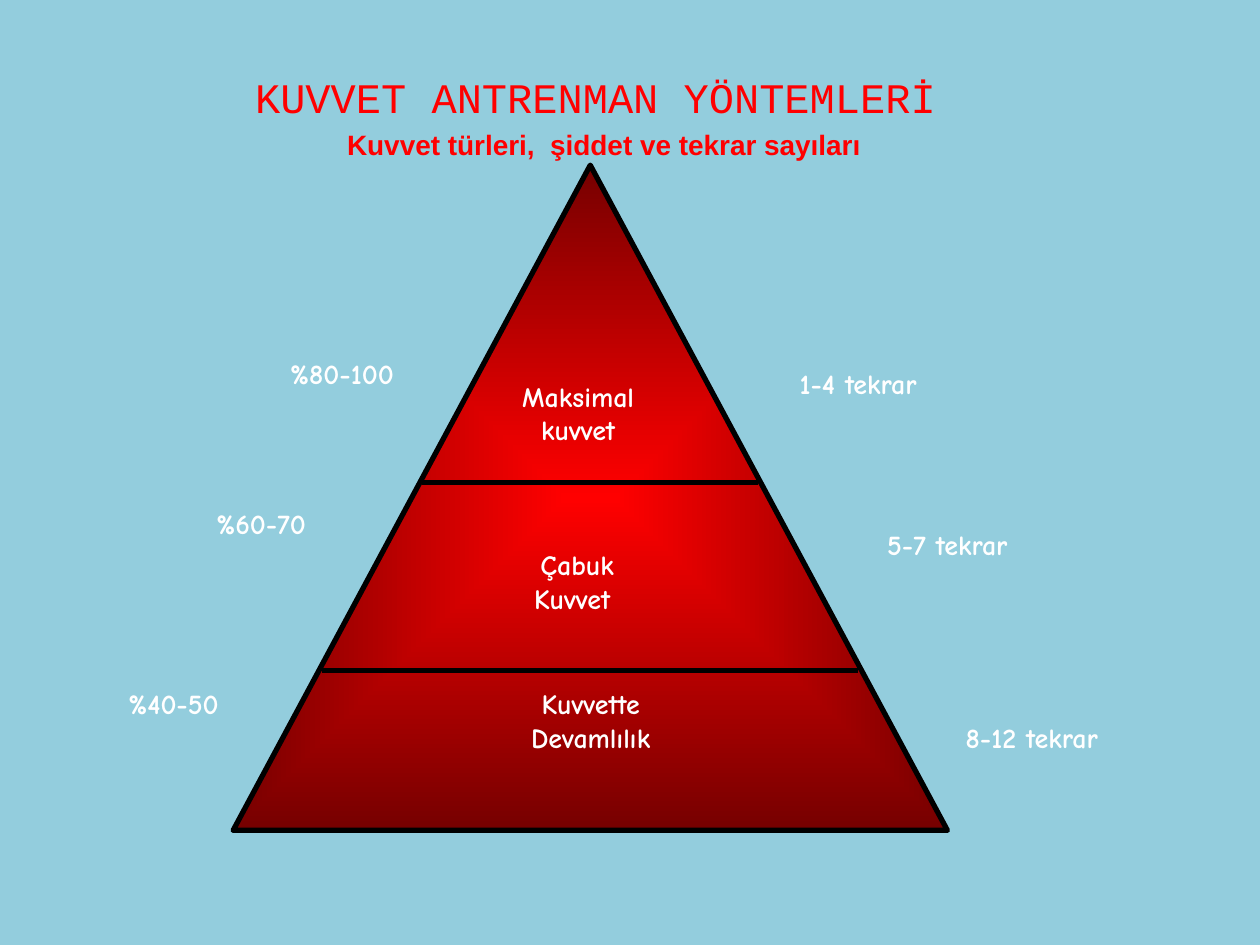
import lxml.etree
import pptx
import pptx.dml.color
import pptx.enum.dml
import pptx.enum.shapes
import pptx.enum.text
import pptx.oxml
import pptx.oxml.ns
import pptx.util
from pptx.util import Cm

SKY = pptx.dml.color.RGBColor(0x93, 0xCD, 0xDD)
RED = pptx.dml.color.RGBColor(0xFF, 0x00, 0x00)
DARK_RED = pptx.dml.color.RGBColor(0x76, 0x00, 0x00)
BLACK = pptx.dml.color.RGBColor(0x00, 0x00, 0x00)
WHITE = pptx.dml.color.RGBColor(0xFF, 0xFF, 0xFF)
CENTER = pptx.enum.text.PP_ALIGN.CENTER


def format_paragraph(paragraph, font_name, size, color, bold):
    paragraph.alignment = CENTER
    paragraph.font.name = font_name
    paragraph.font.size = pptx.util.Pt(size)
    paragraph.font.color.rgb = color
    paragraph.font.bold = bold


presentation = pptx.Presentation()
presentation.slide_width = Cm(25.4)
presentation.slide_height = Cm(19.05)
slide = presentation.slides.add_slide(presentation.slide_layouts[5])
slide.background.fill.solid()
slide.background.fill.fore_color.rgb = SKY

# Title and subtitle
title = slide.shapes.title
title.left, title.top, title.width, title.height = Cm(3.1), Cm(1.32), Cm(18.31), Cm(2.11)
title_frame = title.text_frame
title_frame.text = "KUVVET ANTRENMAN YÖNTEMLERİ \nKuvvet türleri,  şiddet ve tekrar sayıları "
title_frame.vertical_anchor = pptx.enum.text.MSO_ANCHOR.TOP
title_frame.auto_size = pptx.enum.text.MSO_AUTO_SIZE.NONE
title_styles = [("Courier New", 24, False), ("Arial", 16, True)]
for paragraph, (font_name, size, bold) in zip(title_frame.paragraphs, title_styles):
    format_paragraph(paragraph, font_name, size, RED, bold)
    paragraph.space_before = pptx.util.Pt(size * 0.2)

# Pyramid, bright in the middle
pyramid = slide.shapes.add_shape(
    pptx.enum.shapes.MSO_SHAPE.ISOSCELES_TRIANGLE, Cm(4.7), Cm(3.33), Cm(14.4), Cm(13.41))
pyramid.shadow.inherit = False
pyramid.line.color.rgb = BLACK
pyramid.line.width = pptx.util.Pt(3)
pyramid.fill.gradient()
for stop, position, color in zip(pyramid.fill.gradient_stops, (0, 1), (RED, DARK_RED)):
    stop.position = position
    stop.color.rgb = color
gradient = pyramid.fill._xPr.find(pptx.oxml.ns.qn("a:gradFill"))
gradient.remove(gradient.find(pptx.oxml.ns.qn("a:lin")))
gradient_path = pptx.oxml.parse_xml(
    f'<a:path {pptx.oxml.ns.nsdecls("a")} path="shape">'
    '<a:fillToRect l="50000" t="50000" r="50000" b="50000"/></a:path>')
gradient.find(pptx.oxml.ns.qn("a:gsLst")).addnext(gradient_path)

# Dividers between the levels
for left, right, y in [(6.5, 17.3, 13.51), (8.51, 15.29, 9.73)]:
    divider = slide.shapes.add_connector(
        pptx.enum.shapes.MSO_CONNECTOR.STRAIGHT, Cm(left), Cm(y), Cm(right), Cm(y))
    divider.line.color.rgb = BLACK
    divider.line.width = pptx.util.Pt(3)
    lxml.etree.SubElement(divider._element.spPr, pptx.oxml.ns.qn("a:effectLst"))

# Strength type, intensity and repetitions of each level: text, left, top, width
labels = [
    ("Maksimal kuvvet", 9.6, 7.52, 4.11),
    ("Çabuk Kuvvet ", 9.88, 10.92, 3.51),
    ("Kuvvette Devamlılık", 9.6, 13.72, 4.62),
    ("%80-100", 4.7, 7.06, 4.39),
    ("%60-70", 3.51, 10.08, 3.51),
    ("%40-50", 1.19, 13.72, 4.62),
    ("1-4 tekrar", 14.99, 7.26, 4.62),
    ("5-7 tekrar", 16.79, 10.52, 4.62),
    ("8-12 tekrar", 18.49, 14.4, 4.62),
]
for index, (text, left, top, width) in enumerate(labels):
    height = 1.63 if index < 3 else 0.94
    label = slide.shapes.add_textbox(Cm(left), Cm(top), Cm(width), Cm(height))
    label.text_frame.word_wrap = True
    label.text_frame.auto_size = pptx.enum.text.MSO_AUTO_SIZE.SHAPE_TO_FIT_TEXT
    label.text_frame.text = text
    paragraph = label.text_frame.paragraphs[0]
    format_paragraph(paragraph, "Comic Neue", 16, WHITE, True)
    if text == "%80-100":
        paragraph.space_before = pptx.util.Pt(3.2)

presentation.save("out.pptx")
